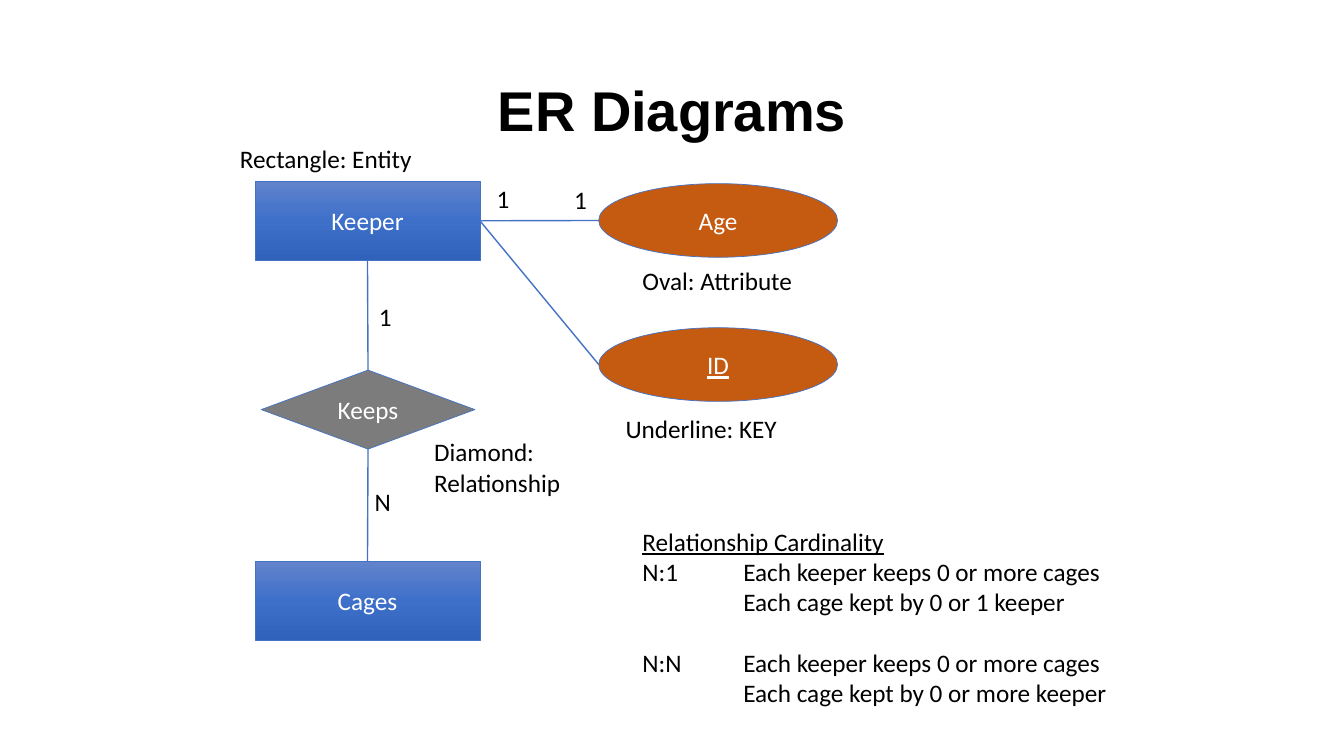
from copy import deepcopy
from dataclasses import dataclass

from pptx import Presentation
from pptx.dml.color import RGBColor
from pptx.enum.shapes import MSO_CONNECTOR, MSO_SHAPE
from pptx.enum.text import MSO_ANCHOR, MSO_AUTO_SIZE, PP_ALIGN
from pptx.oxml.ns import qn
from pptx.util import Pt

RECTANGLE, OVAL, DIAMOND = MSO_SHAPE.RECTANGLE, MSO_SHAPE.OVAL, MSO_SHAPE.DIAMOND
STRAIGHT = MSO_CONNECTOR.STRAIGHT
MIDDLE, TOP = MSO_ANCHOR.MIDDLE, MSO_ANCHOR.TOP
CENTER, LEFT = PP_ALIGN.CENTER, PP_ALIGN.LEFT
FIXED, GROW = MSO_AUTO_SIZE.NONE, MSO_AUTO_SIZE.SHAPE_TO_FIT_TEXT
TOP_SITE, BOTTOM_SITE, RIGHT_SITE, OVAL_LEFT_SITE = 0, 2, 3, 2


@dataclass(frozen=True)
class Theme:
    heading_font: str = "Arial"
    body_font: str = "Calibri"
    title_size: int = 40
    body_size: int = 18
    blank_line: float = 21.6
    tab_size: int = 72
    ink: str = "000000"
    paper: str = "FFFFFF"
    outline: str = "4472C4"
    attribute: str = "C55A11"
    relationship: str = "7C7C7C"
    entity: tuple = ("6183CB", "3E70CA", "3062BB")


def set_values(target, values):
    for key, value in values.items():
        setattr(target, key, value)


class ErSlide:
    def __init__(self, slide, theme):
        self.slide = slide
        self.theme = theme

    def style_font(self, font, color, **changes):
        set_values(font, {"name": self.theme.body_font,
                          "size": Pt(self.theme.body_size), **changes})
        font.color.rgb = RGBColor.from_string(color)

    def title(self, text, left, top, width, height):
        heading = self.slide.shapes.title
        set_values(heading, {"left": Pt(left), "top": Pt(top),
                             "width": Pt(width), "height": Pt(height)})
        set_values(heading.text_frame, {"text": text, "vertical_anchor": MIDDLE,
                                        "word_wrap": True, "auto_size": FIXED})
        line = heading.text_frame.paragraphs[0]
        set_values(line, {"alignment": CENTER, "line_spacing": 0.9})
        self.style_font(line.runs[0].font, self.theme.ink, bold=True,
                        name=self.theme.heading_font, size=Pt(self.theme.title_size))

    def paint_gradient(self, node, colors):
        node.fill.gradient()
        node.fill.gradient_angle = 270
        stop_list = node._element.spPr.find(qn("a:gradFill")).find(qn("a:gsLst"))
        while len(stop_list) < len(colors):
            stop_list.append(deepcopy(stop_list[0]))
        for index, (stop, color) in enumerate(zip(node.fill.gradient_stops, colors)):
            stop.color.rgb = RGBColor.from_string(color)
            stop.position = index / (len(colors) - 1)

    def node(self, kind, text, center, size, fill, underline=False):
        (x, y), (width, height) = center, size
        node = self.slide.shapes.add_shape(kind, Pt(x - width / 2), Pt(y - height / 2),
                                           Pt(width), Pt(height))
        node.shadow.inherit = False
        if isinstance(fill, tuple):
            self.paint_gradient(node, fill)
        else:
            node.fill.solid()
            node.fill.fore_color.rgb = RGBColor.from_string(fill)
        node.line.color.rgb = RGBColor.from_string(self.theme.outline)
        node.line.width = Pt(0.5)
        set_values(node.text_frame, {"text": text, "vertical_anchor": MIDDLE})
        line = node.text_frame.paragraphs[0]
        line.alignment = CENTER
        self.style_font(line.runs[0].font, self.theme.paper, underline=underline)
        return node

    def link(self, start, start_site, end, end_site, end_point):
        link = self.slide.shapes.add_connector(STRAIGHT, 0, 0, 0, 0)
        link.begin_connect(start, start_site)
        link.end_connect(end, end_site)
        set_values(link, {"end_x": Pt(end_point[0]), "end_y": Pt(end_point[1])})
        link.line.color.rgb = RGBColor.from_string(self.theme.outline)
        link.line.width = Pt(1)
        properties = link._element.spPr
        properties.append(properties.makeelement(qn("a:effectLst"), {}))

    def label(self, lines, left, top, width, height=29, wrap=True, underlined=(), spaced=()):
        box = self.slide.shapes.add_textbox(Pt(left), Pt(top), Pt(width), Pt(height))
        frame = box.text_frame
        set_values(frame, {"text": "\n".join(lines), "word_wrap": wrap,
                           "auto_size": GROW, "vertical_anchor": TOP})
        for index, line in enumerate(frame.paragraphs):
            line.alignment = LEFT
            line._p.get_or_add_pPr().set("defTabSz", str(Pt(self.theme.tab_size)))
            if index in spaced:
                line.space_before = Pt(self.theme.blank_line)
            for run in line.runs:
                self.style_font(run.font, self.theme.ink, underline=index in underlined)


def main():
    deck = Presentation()
    set_values(deck, {"slide_width": Pt(960), "slide_height": Pt(540)})
    theme = Theme()
    er = ErSlide(deck.slides.add_slide(deck.slide_layouts[5]), theme)
    er.title("ER Diagrams", 66, 28.75, 828, 104.4)

    entity_x, keeps_x, attribute_x = 262.5, 262.9, 513
    keeper_y, age_y, keeps_y, id_y, cages_y = 157.7, 157.5, 292.6, 260.4, 429.2
    entity_size, keeps_size, attribute_size = (160.6, 56.4), (152.6, 56.4), (170.6, 52.6)
    attribute_edge = attribute_x - attribute_size[0] / 2

    keeper, cages = [er.node(RECTANGLE, name, (entity_x, y), entity_size, theme.entity)
                     for name, y in (("Keeper", keeper_y), ("Cages", cages_y))]
    keeps = er.node(DIAMOND, "Keeps", (keeps_x, keeps_y), keeps_size, theme.relationship)
    for name, y, is_key in (("Age", age_y, False), ("ID", id_y, True)):
        attribute = er.node(OVAL, name, (attribute_x, y), attribute_size,
                            theme.attribute, is_key)
        er.link(keeper, RIGHT_SITE, attribute, OVAL_LEFT_SITE, (attribute_edge, y))

    er.link(keeper, BOTTOM_SITE, keeps, TOP_SITE, (keeps_x, keeps_y - keeps_size[1] / 2))
    er.link(keeps, BOTTOM_SITE, cages, TOP_SITE, (entity_x, cages_y - entity_size[1] / 2))

    for text, left, top, width in (("Rectangle: Entity", 164.3, 99, 198.7),
                                   ("Oval: Attribute", 451.8, 185.8, 146),
                                   ("Underline: KEY", 439.7, 291.7, 146)):
        er.label([text], left, top, width)
    er.label(["Diamond:", "Relationship"], 303, 308.4, 116.6, 51)

    for cardinality, left, top in (("1", 347.6, 127.4), ("1", 403, 128.2),
                                   ("1", 263.5, 211.7), ("N", 260.6, 343.9)):
        er.label([cardinality], left, top, 25, wrap=False)

    er.label(["Relationship Cardinality",
              "N:1\tEach keeper keeps 0 or more cages",
              "\tEach cage kept by 0 or 1 keeper",
              "N:N\tEach keeper keeps 0 or more cages",
              "\tEach cage kept by 0 or more keeper"],
             451.8, 372.2, 359.3, 138, underlined=(0,), spaced=(3,))
    deck.save("out.pptx")


if __name__ == "__main__":
    main()
